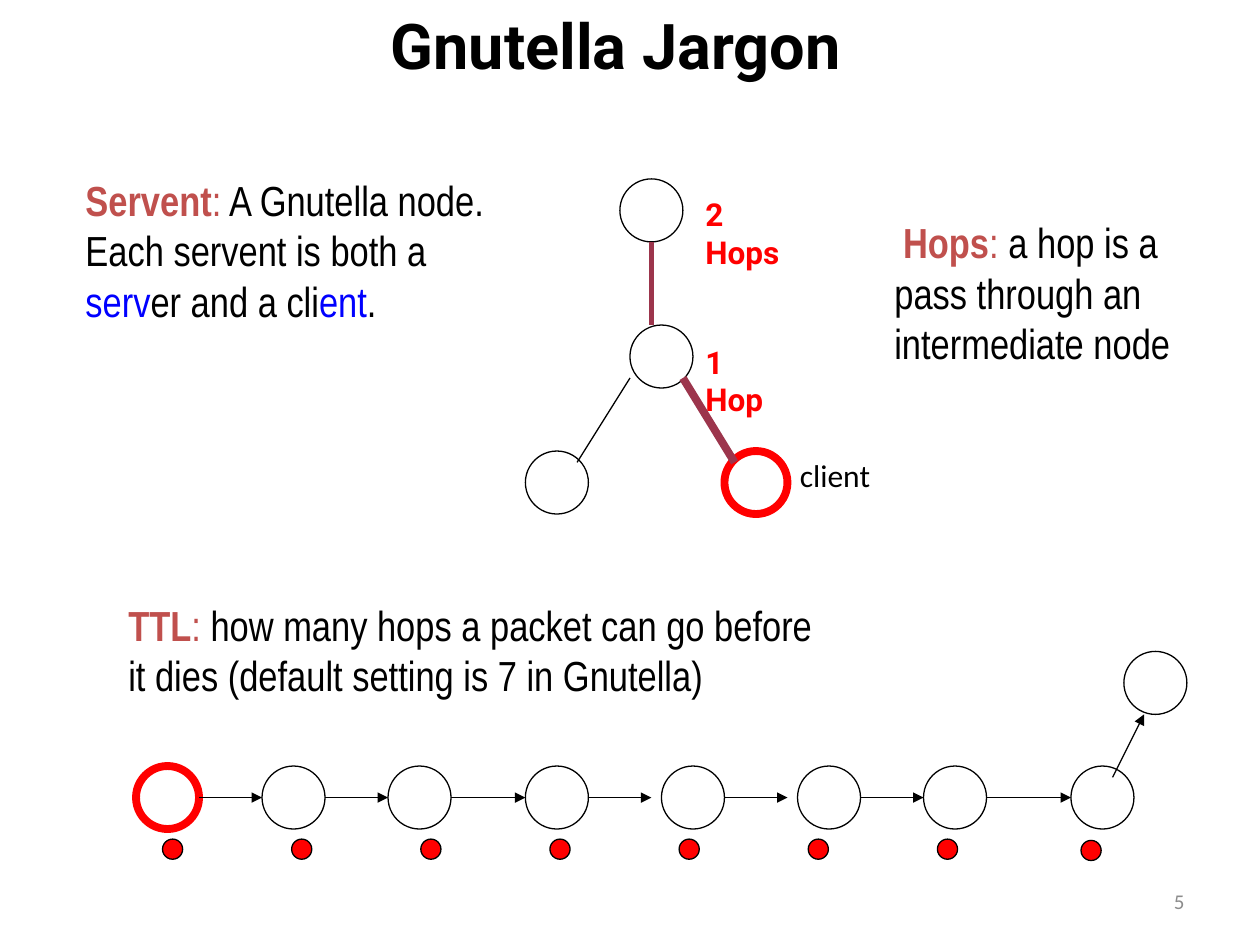
from lxml import etree
from pptx import Presentation
from pptx.dml.color import RGBColor
from pptx.enum import shapes, text
from pptx.oxml import ns
from pptx.util import Inches, Pt

BLACK = RGBColor(0x00, 0x00, 0x00)
RED = RGBColor(0xFF, 0x00, 0x00)
BLUE = RGBColor(0x00, 0x00, 0xFF)
TERM = RGBColor(0xC0, 0x50, 0x4D)
PATH = RGBColor(0x9C, 0x35, 0x4C)
GREY = RGBColor(0x8C, 0x8C, 0x8C)

NODE = 0.5
DOT = 0.16

presentation = Presentation()
presentation.slide_width = Inches(10)
presentation.slide_height = Inches(7.5)
slide = presentation.slides.add_slide(presentation.slide_layouts[5])


def add_circle(left, top, size, line_color=BLACK, line_width=0.75, fill=None):
    circle = slide.shapes.add_shape(
        shapes.MSO_SHAPE.OVAL, Inches(left), Inches(top), Inches(size), Inches(size))
    circle.shadow.inherit = False
    if fill is None:
        circle.fill.background()
    else:
        circle.fill.solid()
        circle.fill.fore_color.rgb = fill
    circle.line.color.rgb = line_color
    circle.line.width = Pt(line_width)


def add_line(start, end, color=BLACK, width=0.75, arrow=False):
    connector = slide.shapes.add_connector(
        shapes.MSO_CONNECTOR.STRAIGHT, *(Inches(value) for value in start + end))
    connector.line.color.rgb = color
    connector.line.width = Pt(width)
    if arrow:
        line = connector.line._get_or_add_ln()
        etree.SubElement(line, ns.qn("a:tailEnd"), type="triangle")
    etree.SubElement(connector._element.spPr, ns.qn("a:effectLst"))


# Title
title = slide.shapes.title
title.left, title.top = Inches(3), Inches(0)
title.width, title.height = Inches(4.01), Inches(0.7)
title.text_frame.text = "Gnutella Jargon"
title.text_frame.vertical_anchor = text.MSO_ANCHOR.TOP
paragraph = title.text_frame.paragraphs[0]
paragraph.alignment = text.PP_ALIGN.LEFT
font = paragraph.runs[0].font
font.name, font.size, font.bold = "Roboto", Pt(36), True
font.color.rgb = BLACK

# Definitions: each run is (text, color, bold, size)
definitions = [
    ((0.92, 4.7, 5.67, 0.91), [
        ("TTL", TERM, True, 24), (":", TERM, False, 24),
        (" how many hops a packet can go before it dies "
         "(default setting is 7 in Gnutella)", BLACK, False, 24)]),
    ((7, 1.67, 2.44, 1.3), [
        (" ", TERM, True, 20), ("Hops", TERM, True, 24), (":", TERM, False, 24),
        (" a hop is a pass through an intermediate node", BLACK, False, 24)]),
    ((0.58, 1.33, 3.62, 1.31), [
        ("Servent", TERM, True, 24), (":", TERM, False, 24),
        (" A Gnutella node. Each servent is both a ", BLACK, False, 24),
        ("serv", BLUE, False, 24), ("er and a cli", BLACK, False, 24),
        ("ent", BLUE, False, 24), (".", BLACK, False, 24)]),
]
for box, runs in definitions:
    shape = slide.shapes.add_textbox(*(Inches(value) for value in box))
    shape.text_frame.word_wrap = True
    shape.text_frame.vertical_anchor = text.MSO_ANCHOR.MIDDLE
    for words, color, bold, size in runs:
        run = shape.text_frame.paragraphs[0].add_run()
        run.text = words
        run.font.name = "Roboto" if words == " " else "Arial Narrow"
        run.font.size, run.font.bold = Pt(size), bold
        run.font.color.rgb = color

# Short labels and slide number
labels = [
    ("1 Hop", (5.5, 2.67, 0.82, 0.37), "Roboto", 18, True, RED),
    ("2 Hops", (5.5, 1.5, 0.94, 0.37), "Roboto", 18, True, RED),
    ("client", (6.25, 3.57, 0.78, 0.41), "Calibri", 18, False, BLACK),
    ("5", (7.17, 6.95, 2.33, 0.4), "Calibri", 12, False, GREY),
]
for words, box, font_name, size, bold, color in labels:
    shape = slide.shapes.add_textbox(*(Inches(value) for value in box))
    shape.text_frame.word_wrap = True
    shape.text_frame.text = words
    font = shape.text_frame.paragraphs[0].runs[0].font
    font.name, font.size, font.bold = font_name, Pt(size), bold
    font.color.rgb = color
# The slide number, last in the list, sits at the right
shape.text_frame.vertical_anchor = text.MSO_ANCHOR.MIDDLE
shape.text_frame.paragraphs[0].alignment = text.PP_ALIGN.RIGHT

# Hop tree
for left, top in [(4.92, 1.42), (5, 2.58), (4.17, 3.58)]:
    add_circle(left, top, NODE)
add_circle(5.75, 3.58, NODE, RED, 4.5)
add_line((5.17, 1.92), (5.17, 2.58), PATH, 3)
add_line((5, 3), (4.58, 3.67))
add_line((5.42, 3), (5.83, 3.67), PATH, 4.5)

# TTL chain
chain_lefts = [1.08, 2.08, 3.08, 4.17, 5.25, 6.33, 7.33, 8.5]
arrow_ends = [2.08, 3.08, 4.17, 5.17, 6.25, 7.33, 8.5]
add_circle(chain_lefts[0], 6.08, NODE, RED, 4.5)
for left in chain_lefts[1:]:
    add_circle(left, 6.08, NODE)
for left, end in zip(chain_lefts, arrow_ends):
    add_line((left + NODE, 6.33), (end, 6.33), arrow=True)
add_circle(8.92, 5.17, NODE)
add_line((8.83, 6.17), (9.08, 5.67), arrow=True)

# One dot for each hop, evenly spaced except the last
for index in range(7):
    add_circle(1.29 + index * 1.025, 6.66, DOT, fill=RED)
add_circle(8.58, 6.67, DOT, fill=RED)

presentation.save("out.pptx")
